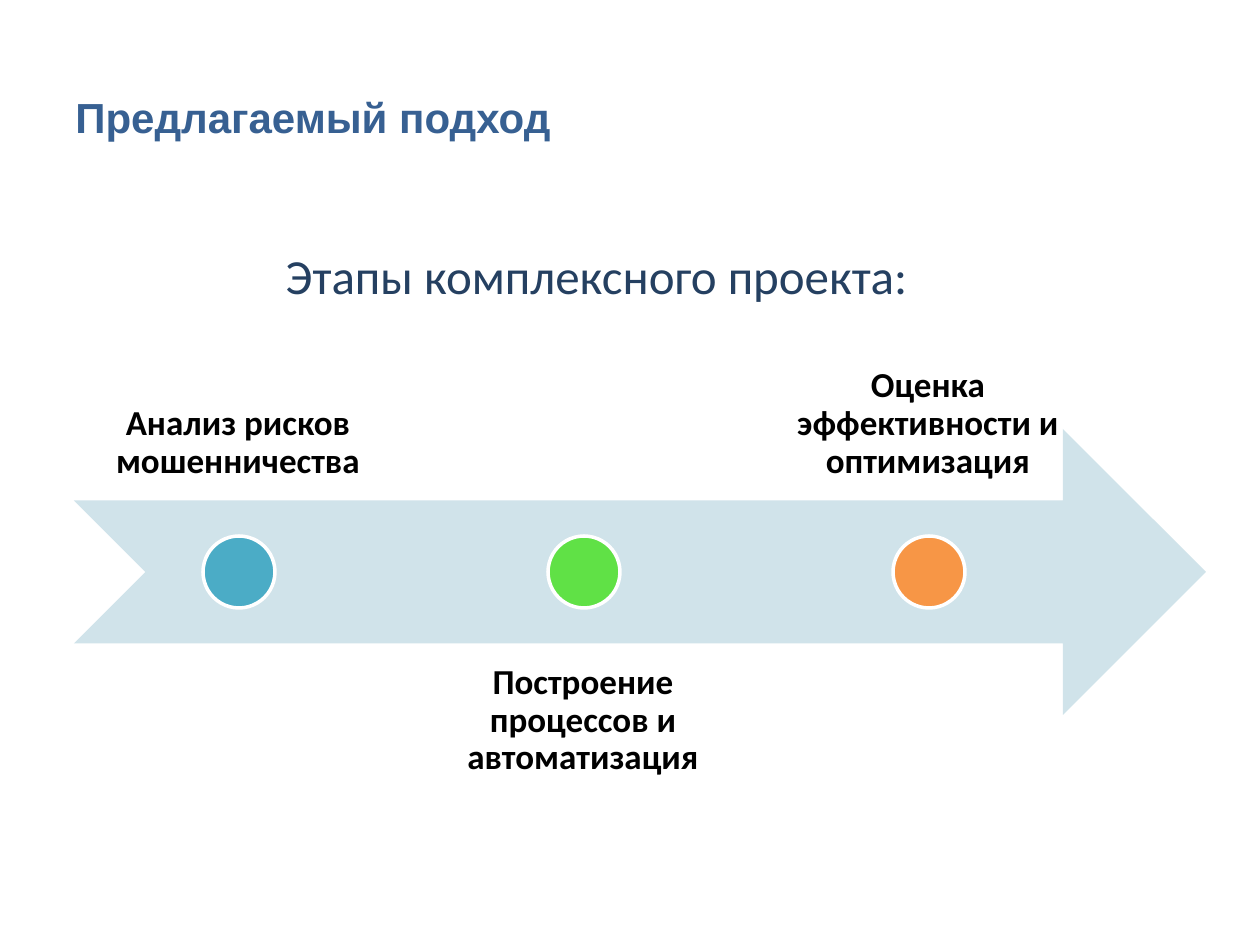
import pptx
import pptx.util
import pptx.dml.color
import pptx.enum.shapes
import pptx.enum.text

SCALE = 914400 / 126  # EMU per px
ANCHOR = pptx.enum.text.MSO_ANCHOR
ALIGN = pptx.enum.text.PP_ALIGN
SHAPE = pptx.enum.shapes.MSO_SHAPE


def paint(color_format, color):
    color_format.rgb = pptx.dml.color.RGBColor.from_string(color)


def add_text(text, place, size, color, font, bold, align, anchor, insets=None, spacing=None):
    box = page.shapes.add_textbox(*[round(v * SCALE) for v in place])
    frame = box.text_frame
    frame.word_wrap = True
    frame.vertical_anchor = anchor
    if insets is not None:
        inset = round(insets * SCALE)
        frame.margin_left = frame.margin_right = inset
        frame.margin_top = frame.margin_bottom = inset
    para = frame.paragraphs[0]
    para.alignment = align
    if spacing is not None:
        para.line_spacing = spacing
    span = para.add_run()
    span.text = text
    span.font.name = font
    span.font.size = pptx.util.Pt(size)
    span.font.bold = bold
    paint(span.font.color, color)


deck = pptx.Presentation()
deck.slide_width = round(1260 * SCALE)
deck.slide_height = round(945 * SCALE)
page = deck.slides.add_slide(deck.slide_layouts[6])

# Title
add_text("Предлагаемый подход", (63, 38, 1134, 158), 24, "376092", "Arial", True,
         ALIGN.LEFT, ANCHOR.MIDDLE)

# Timeline arrow
arrow = page.shapes.add_shape(SHAPE.NOTCHED_RIGHT_ARROW,
                              *[round(v * SCALE) for v in (74, 429, 1132, 286)])
arrow.shadow.inherit = False
arrow.fill.solid()
paint(arrow.fill.fore_color, "D0E3EA")
arrow.line.fill.background()

# Stages: labels alternate above and below the arrow
stages = [
    ("Анализ рисков мошенничества", "4BACC6"),
    ("Построение процессов и автоматизация", "60E146"),
    ("Оценка эффективности и оптимизация", "F79646"),
]
for index, (label, color) in enumerate(stages):
    left = 74 + index * 345
    above = index % 2 == 0
    add_text(label, (left, 215 if above else 644, 328, 286), 20, "000000", "Calibri", True,
             ALIGN.CENTER, ANCHOR.BOTTOM if above else ANCHOR.TOP, 20, 0.9)
    dot = page.shapes.add_shape(SHAPE.OVAL,
                                *[round(v * SCALE) for v in (left + 129, 536, 72, 72)])
    dot.shadow.inherit = False
    dot.fill.solid()
    paint(dot.fill.fore_color, color)
    paint(dot.line.color, "FFFFFF")
    dot.line.width = pptx.util.Pt(2)

# Heading above the timeline
add_text("Этапы комплексного проекта:", (213, 239, 767, 72), 28, "254061", "Calibri", False,
         ALIGN.CENTER, ANCHOR.TOP)

deck.save("out.pptx")
